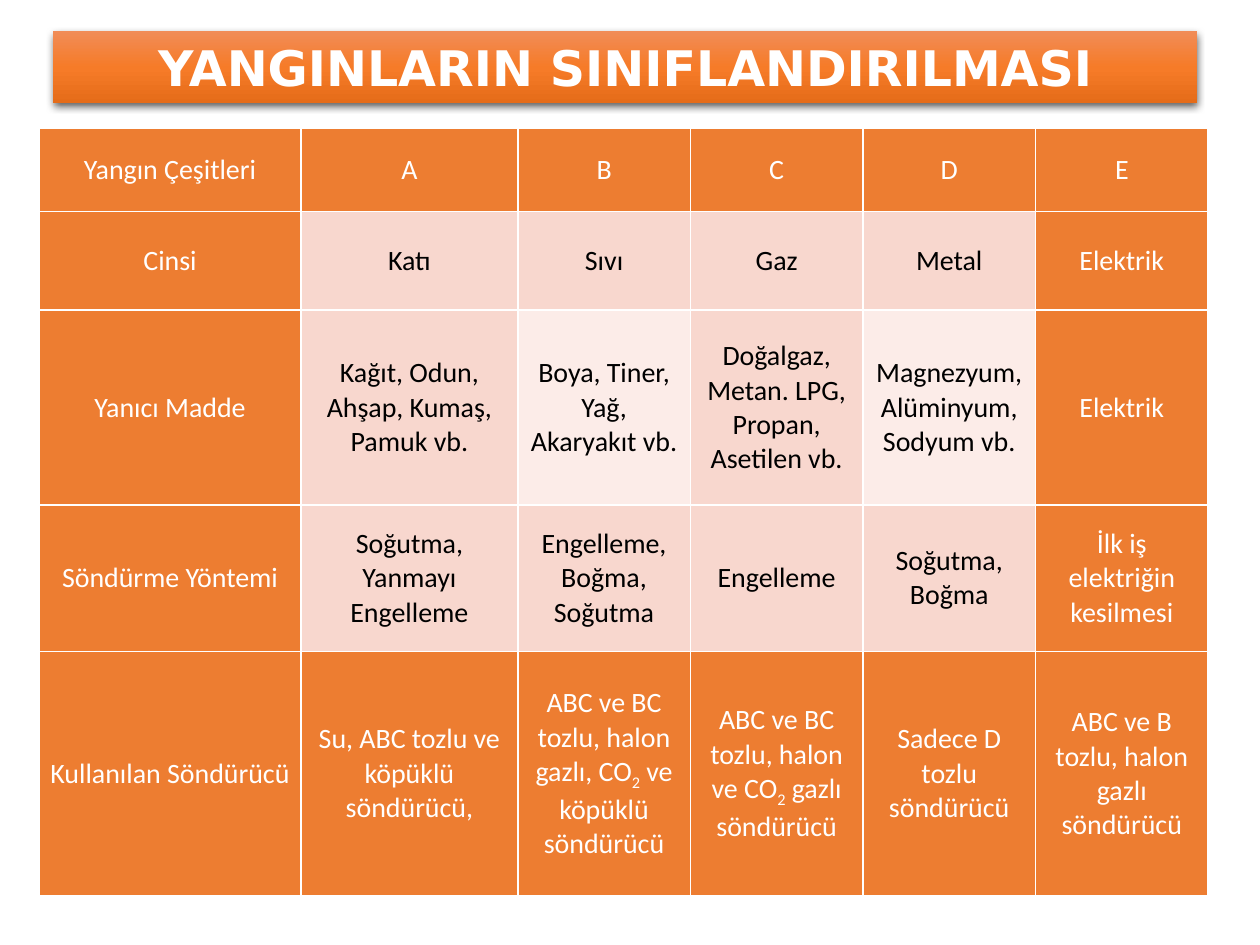
import copy
from dataclasses import dataclass

import pptx
import pptx.dml.color
import pptx.enum.shapes
import pptx.enum.text
import pptx.oxml
import pptx.oxml.ns
import pptx.util
from pptx.util import Inches

RGB = pptx.dml.color.RGBColor.from_string
qn = pptx.oxml.ns.qn
NAMESPACE = pptx.oxml.ns.nsdecls("a")


@dataclass(frozen=True)
class Theme:
    title_font: str = "DejaVu Sans"
    table_font: str = "Calibri"
    title_size: int = 28
    table_size: int = 16
    white: str = "FFFFFF"
    black: str = "000000"
    orange: str = "ED7D31"
    band: str = "F8D7CE"
    pale: str = "FCECE8"
    banner: tuple = ("F18C57", "F67B28", "E56C19")


THEME = Theme()
TITLE = "YANGINLARIN SINIFLANDIRILMASI"
COLUMN_WIDTHS = [2.08, 1.72] + [1.37] * 4
ROW_HEIGHTS = [0.66, 0.78, 1.55, 1.16, 1.94]
# A part between bars is set as a subscript.
FIRE_CLASSES = [
    ["Yangın Çeşitleri", "A", "B", "C", "D", "E"],
    ["Cinsi", "Katı", "Sıvı", "Gaz", "Metal", "Elektrik"],
    ["Yanıcı Madde", "Kağıt, Odun, Ahşap, Kumaş, Pamuk vb.",
     "Boya, Tiner, Yağ, Akaryakıt vb.",
     "Doğalgaz, Metan. LPG, Propan, Asetilen vb.",
     "Magnezyum, Alüminyum, Sodyum vb.", "Elektrik"],
    ["Söndürme Yöntemi", "Soğutma, Yanmayı Engelleme",
     "Engelleme, Boğma, Soğutma", "Engelleme", "Soğutma, Boğma",
     "İlk iş elektriğin kesilmesi"],
    ["Kullanılan Söndürücü", "Su, ABC tozlu ve köpüklü söndürücü,",
     "ABC ve BC tozlu, halon gazlı, CO|2| ve köpüklü söndürücü",
     "ABC ve BC tozlu, halon ve CO|2| gazlı söndürücü",
     "Sadece D tozlu söndürücü",
     "ABC ve B tozlu, halon gazlı söndürücü"],
]
PALE_CELLS = {(2, 2), (2, 4)}


def write_centred(para, text, font, size, color, bold=False):
    para.alignment = pptx.enum.text.PP_ALIGN.CENTER
    for index, part in enumerate(text.split("|")):
        span = para.add_run()
        span.text = part
        span.font.name = font
        span.font.size = pptx.util.Pt(size)
        span.font.bold = bold
        span.font.color.rgb = RGB(color)
        if index % 2:
            span.font._element.set("baseline", "-25000")


def fill_gradient(shape, colors):
    """Spread the colours evenly from top to bottom."""
    shape.fill.gradient()
    shape.fill.gradient_angle = 270
    stop_list = shape._element.spPr.find(".//" + qn("a:gsLst"))
    for _ in colors[2:]:
        stop_list.insert(1, copy.deepcopy(stop_list[0]))
    for index, (stop, color) in enumerate(zip(shape.fill.gradient_stops, colors)):
        stop.position = index / (len(colors) - 1)
        stop.color.rgb = RGB(color)


def add_soft_shadow(shape):
    shape.shadow.inherit = False
    shape._element.spPr.find(qn("a:effectLst")).append(pptx.oxml.parse_xml(
        f'<a:outerShdw {NAMESPACE} blurRad="57150" dist="19050" dir="5400000" '
        f'algn="ctr" rotWithShape="0"><a:srgbClr val="{THEME.black}">'
        '<a:alpha val="63000"/></a:srgbClr></a:outerShdw>'))


def add_title_banner(page, left, top, width, height):
    banner = page.shapes.add_shape(
        pptx.enum.shapes.MSO_SHAPE.RECTANGLE, left, top, width, height)
    fill_gradient(banner, THEME.banner)
    banner.line.fill.background()
    add_soft_shadow(banner)
    frame = banner.text_frame
    frame.word_wrap = True
    frame.vertical_anchor = pptx.enum.text.MSO_ANCHOR.MIDDLE
    write_centred(frame.paragraphs[0], TITLE, THEME.title_font,
                  THEME.title_size, THEME.white, bold=True)


def add_borders(cell):
    properties = cell._tc.get_or_add_tcPr()
    for side in "LRTB":
        properties.append(pptx.oxml.parse_xml(
            f'<a:ln{side} {NAMESPACE} w="{pptx.util.Pt(1)}"><a:solidFill>'
            f'<a:srgbClr val="{THEME.white}"/></a:solidFill></a:ln{side}>'))


def cell_colors(row, column):
    """Return fill and text colour: the table's rim is orange, its core light."""
    if row in (0, len(ROW_HEIGHTS) - 1) or column in (0, len(COLUMN_WIDTHS) - 1):
        return THEME.orange, THEME.white
    fill = THEME.pale if (row, column) in PALE_CELLS else THEME.band
    return fill, THEME.black


def add_fire_table(page, left, top):
    table = page.shapes.add_table(
        len(ROW_HEIGHTS), len(COLUMN_WIDTHS), left, top,
        Inches(sum(COLUMN_WIDTHS)), Inches(sum(ROW_HEIGHTS))).table
    table.first_row = table.horz_banding = False
    for column, width in zip(table.columns, COLUMN_WIDTHS):
        column.width = Inches(width)
    for row, height in zip(table.rows, ROW_HEIGHTS):
        row.height = Inches(height)
    for row, texts in enumerate(FIRE_CLASSES):
        for column, text in enumerate(texts):
            cell = table.cell(row, column)
            fill, color = cell_colors(row, column)
            add_borders(cell)
            cell.fill.solid()
            cell.fill.fore_color.rgb = RGB(fill)
            cell.margin_left = cell.margin_right = Inches(0.07)
            cell.margin_top = cell.margin_bottom = 0
            cell.vertical_anchor = pptx.enum.text.MSO_ANCHOR.MIDDLE
            write_centred(cell.text_frame.paragraphs[0], text,
                          THEME.table_font, THEME.table_size, color)


def main():
    deck = pptx.Presentation()
    deck.slide_width, deck.slide_height = Inches(10), Inches(7.5)
    page = deck.slides.add_slide(deck.slide_layouts[6])
    add_title_banner(page, Inches(0.42), Inches(0.25), Inches(9.08), Inches(0.57))
    add_fire_table(page, Inches(0.31), Inches(1.02))
    deck.save("out.pptx")


if __name__ == "__main__":
    main()
